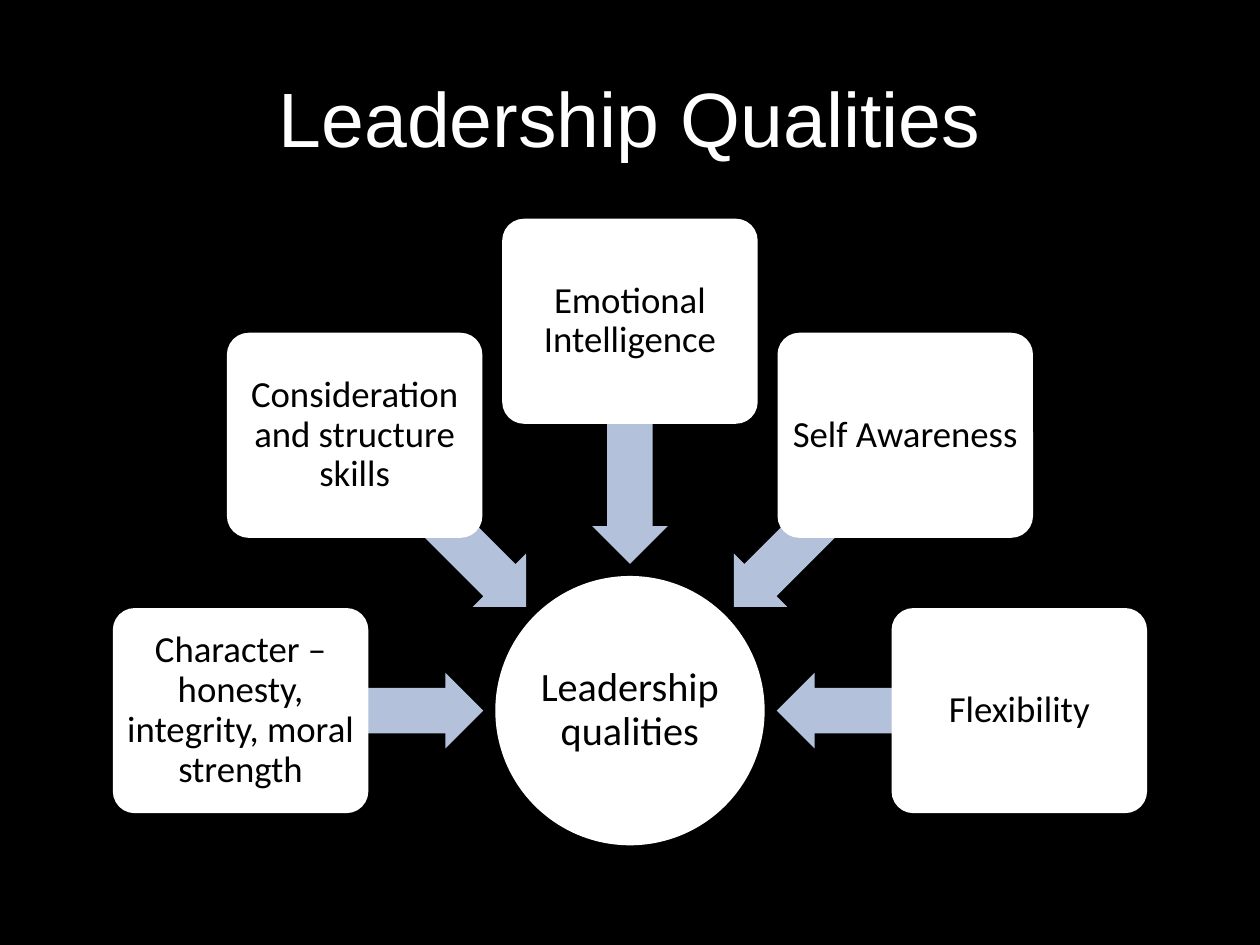
from math import cos, radians, sin

from pptx import Presentation
from pptx.dml.color import RGBColor
from pptx.enum.shapes import MSO_SHAPE
from pptx.enum.text import MSO_ANCHOR, PP_ALIGN
from pptx.util import Inches, Pt

CIRCLE = MSO_SHAPE.OVAL
ROUNDED = MSO_SHAPE.ROUNDED_RECTANGLE
ARROW = MSO_SHAPE.LEFT_ARROW
MIDDLE = MSO_ANCHOR.MIDDLE
CENTER = PP_ALIGN.CENTER

BLACK, WHITE, PALE_BLUE = "000000", "FFFFFF", "B3C1DB"
HUB_X, HUB_Y = 5, 5.64
BOX_RADIUS, ARROW_RADIUS = 3.09, 2.13


def add_centered_shape(kind, x, y, width, height, fill):
    """Add a plain filled shape around its centre point, in inches."""
    shape = page.shapes.add_shape(kind, Inches(x - width / 2), Inches(y - height / 2),
                                  Inches(width), Inches(height))
    shape.shadow.inherit = False
    shape.fill.solid()
    shape.fill.fore_color.rgb = RGBColor.from_string(fill)
    shape.line.fill.background()
    return shape


def write_text(shape, text, font, size, color, inset, spacing):
    frame = shape.text_frame
    frame.word_wrap = True
    frame.vertical_anchor = MIDDLE
    frame.margin_left = frame.margin_right = Inches(inset)
    frame.margin_top = frame.margin_bottom = Inches(inset)
    para = frame.paragraphs[0]
    para.alignment = CENTER
    para.line_spacing = spacing
    span = para.add_run()
    span.text = text
    span.font.name = font
    span.font.size = Pt(size)
    span.font.color.rgb = RGBColor.from_string(color)


deck = Presentation()
deck.slide_width, deck.slide_height = Inches(10), Inches(7.5)
page = deck.slides.add_slide(deck.slide_layouts[6])
page.background.fill.solid()
page.background.fill.fore_color.rgb = RGBColor.from_string(BLACK)

title = page.shapes.add_textbox(Inches(0.5), Inches(0.3), Inches(9), Inches(1.25))
write_text(title, "Leadership Qualities", "Arial", 44, WHITE, 0.05, 1.0)

hub = add_centered_shape(CIRCLE, HUB_X, HUB_Y, 2.11, 2.11, WHITE)
hub.line.color.rgb = RGBColor.from_string(WHITE)
hub.line.width = Pt(2)
write_text(hub, "Leadership qualities", "Calibri", 23, BLACK, 0.02, 0.9)

# The qualities fan out over a half circle, from left to right.
qualities = [
    "Character – honesty, integrity, moral strength",
    "Consideration and structure skills",
    "Emotional Intelligence",
    "Self Awareness",
    "Flexibility",
]
for index, quality in enumerate(qualities):
    rotation = 180 + 45 * index
    across, down = cos(radians(rotation)), sin(radians(rotation))

    arrow = add_centered_shape(ARROW, HUB_X + ARROW_RADIUS * across,
                               HUB_Y + ARROW_RADIUS * down, 1.93, 0.6, PALE_BLUE)
    arrow.adjustments[0] = 0.6
    arrow.adjustments[1] = 0.5
    arrow.rotation = rotation % 360

    box = add_centered_shape(ROUNDED, HUB_X + BOX_RADIUS * across,
                             HUB_Y + BOX_RADIUS * down, 2, 1.6, WHITE)
    box.adjustments[0] = 0.1
    box.line.color.rgb = RGBColor.from_string(WHITE)
    box.line.width = Pt(2)
    write_text(box, quality, "Calibri", 21, BLACK, 0.04, 0.9)

deck.save("out.pptx")
